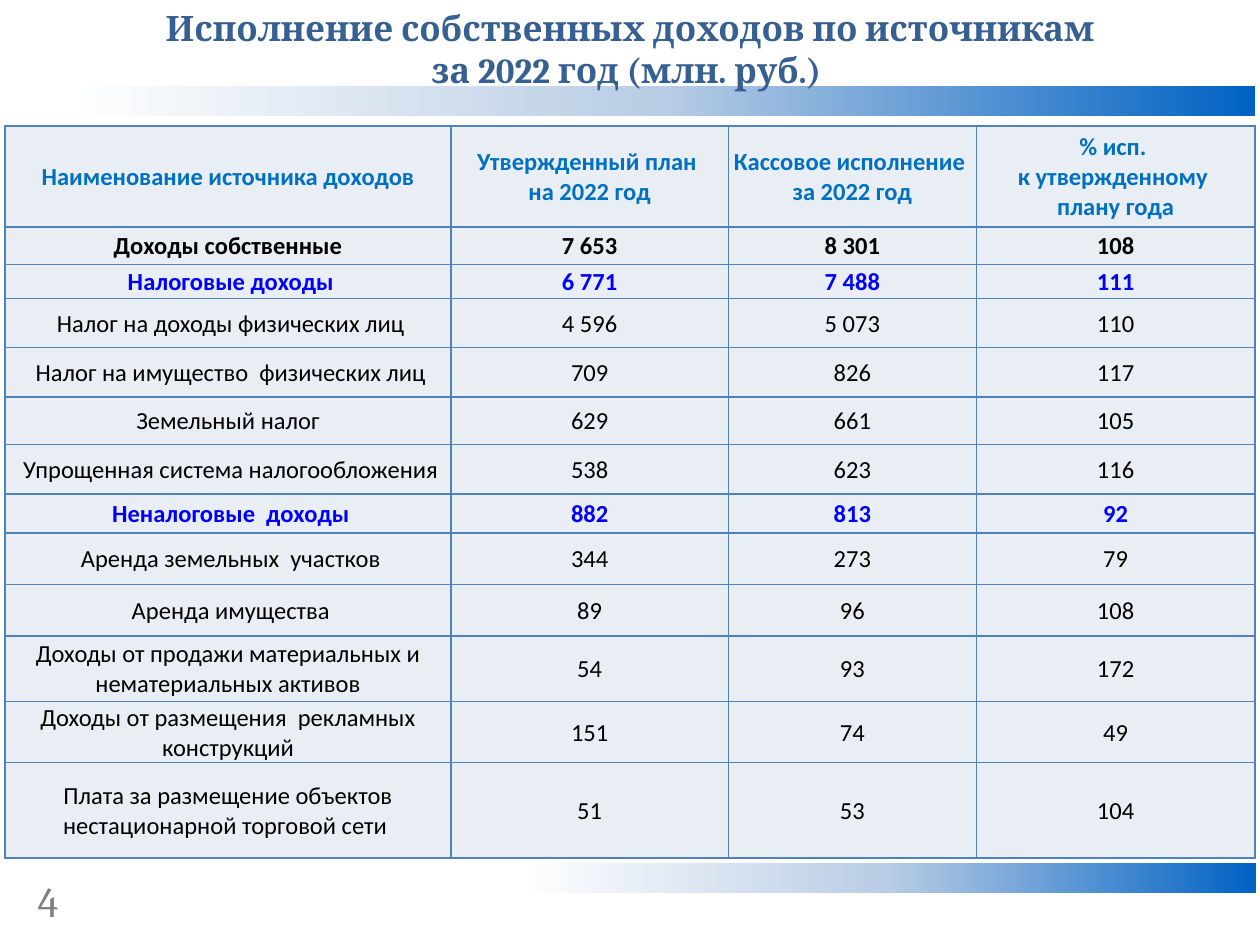
from copy import deepcopy

from lxml import etree
from pptx import Presentation
from pptx.dml.color import RGBColor
from pptx.enum import text as t
from pptx.oxml.ns import qn
from pptx.util import Inches, Pt
from pptx.enum.shapes import MSO_SHAPE

COLORS = {
    "title": "376092", "number": "808080", "head": "0070C0",
    "total": "000000", "group": "0000FF", "item": "000000",
    "cell": "E9EDF4", "border": "4F81BD",
}
FADE = [(0, "0062C4"), (0.5, "B9CDE5"), (1, "FFFFFF")]
COLS = [3.54, 2.2, 1.97, 2.21]
ROWS = [  # style, height, cell texts
    ("head", 0.8, ["Наименование источника доходов",
                   "Утвержденный план \nна 2022 год",
                   "Кассовое исполнение \nза 2022 год",
                   "% исп. \nк утвержденному \nплану года"]),
    ("total", 0.3, ["Доходы собственные", "7 653", "8 301", "108"]),
    ("group", 0.27, [" Налоговые доходы", "6 771", "7 488", "111"]),
    ("item", 0.39, [" Налог на доходы физических лиц", "4 596", "5 073", "110"]),
    ("item", 0.39, [" Налог на имущество  физических лиц", "709", "826", "117"]),
    ("item", 0.38, [" Земельный налог ", "629", "661", "105"]),
    ("item", 0.39, [" Упрощенная система налогообложения", "538", "623", "116"]),
    ("group", 0.31, [" Неналоговые  доходы", "882", "813", "92"]),
    ("item", 0.41, [" Аренда земельных  участков", "344", "273", "79"]),
    ("item", 0.41, [" Аренда имущества", "89", "96", "108"]),
    ("item", 0.52, ["Доходы от продажи материальных и нематериальных активов",
                    "54", "93", "172"]),
    ("item", 0.47, [" Доходы от размещения  рекламных  конструкций",
                    "151", "74", "49"]),
    ("item", 0.76, ["Плата за размещение объектов нестационарной торговой сети ",
                    "51", "53", "104"]),
]


def style(frame, color, align, **look):
    """Format every paragraph and run of a text frame."""
    for par in frame.paragraphs:
        par.alignment = align
        for run in par.runs:
            run.font.color.rgb = RGBColor.from_string(COLORS[color])
            for name, value in look.items():
                setattr(run.font, name, value)


def edge(cell):
    """Draw thin borders on all four sides of a cell."""
    props = cell._tc.get_or_add_tcPr()
    for spot, side in enumerate(("a:lnL", "a:lnR", "a:lnT", "a:lnB")):
        line = etree.Element(qn(side), w=str(Pt(1)))
        fill = etree.SubElement(line, qn("a:solidFill"))
        etree.SubElement(fill, qn("a:srgbClr"), val=COLORS["border"])
        props.insert(spot, line)


prs = Presentation()
prs.slide_width, prs.slide_height = Inches(10), Inches(7.5)
slide = prs.slides.add_slide(prs.slide_layouts[5])

# Fading bars under the title and the table
for left, top, width in [(0.51, 0.68, 9.45), (4.1, 6.85, 5.87)]:
    bar = slide.shapes.add_shape(MSO_SHAPE.RECTANGLE, Inches(left), Inches(top),
                                 Inches(width), Inches(0.24))
    bar.shadow.inherit = False
    bar.line.fill.background()
    bar.fill.gradient()
    bar.fill.gradient_angle = 180
    first = bar.fill._fill._gradFill.find(qn("a:gsLst"))[0]
    first.addnext(deepcopy(first))
    for stop, (pos, color) in zip(bar.fill.gradient_stops, FADE):
        stop.position = pos
        stop.color.rgb = RGBColor.from_string(color)

# Page number
page = slide.shapes.add_textbox(Inches(0.2), Inches(6.9), Inches(0.46), Inches(0.5))
page.text_frame.word_wrap = True
page.text_frame.text = "4"
style(page.text_frame, "number", t.PP_ALIGN.LEFT, name="Cambria", size=Pt(24))

# Title, in front of the bars
title = slide.shapes.title
slide.shapes._spTree.append(title._element)
title.left, title.top = Inches(0), Inches(0)
title.width, title.height = Inches(10), Inches(0.77)
frame = title.text_frame
frame.text = "Исполнение собственных доходов по источникам\vза 2022 год (млн. руб.) "
frame.vertical_anchor = t.MSO_ANCHOR.TOP
frame.auto_size = t.MSO_AUTO_SIZE.NONE
style(frame, "title", t.PP_ALIGN.CENTER, name="Cambria", size=Pt(20), bold=True)

# Income table
table = slide.shapes.add_table(len(ROWS), len(COLS), Inches(0.04), Inches(1),
                               Inches(sum(COLS)), Inches(5.83)).table
for col, width in zip(table.columns, COLS):
    col.width = Inches(width)
form = {
    "margin_left": Inches(0.01), "margin_right": Inches(0.01),
    "margin_top": Inches(0.01), "margin_bottom": 0,
    "vertical_anchor": t.MSO_ANCHOR.MIDDLE,
}
for row, (kind, height, texts) in zip(table.rows, ROWS):
    row.height = Inches(height)
    for cell, words in zip(row.cells, texts):
        cell.text = words
        for name, value in form.items():
            setattr(cell, name, value)
        cell.fill.solid()
        cell.fill.fore_color.rgb = RGBColor.from_string(COLORS["cell"])
        edge(cell)
        style(cell.text_frame, kind, t.PP_ALIGN.CENTER, name="Calibri",
              size=Pt(14), bold=kind != "item")

prs.save("out.pptx")
